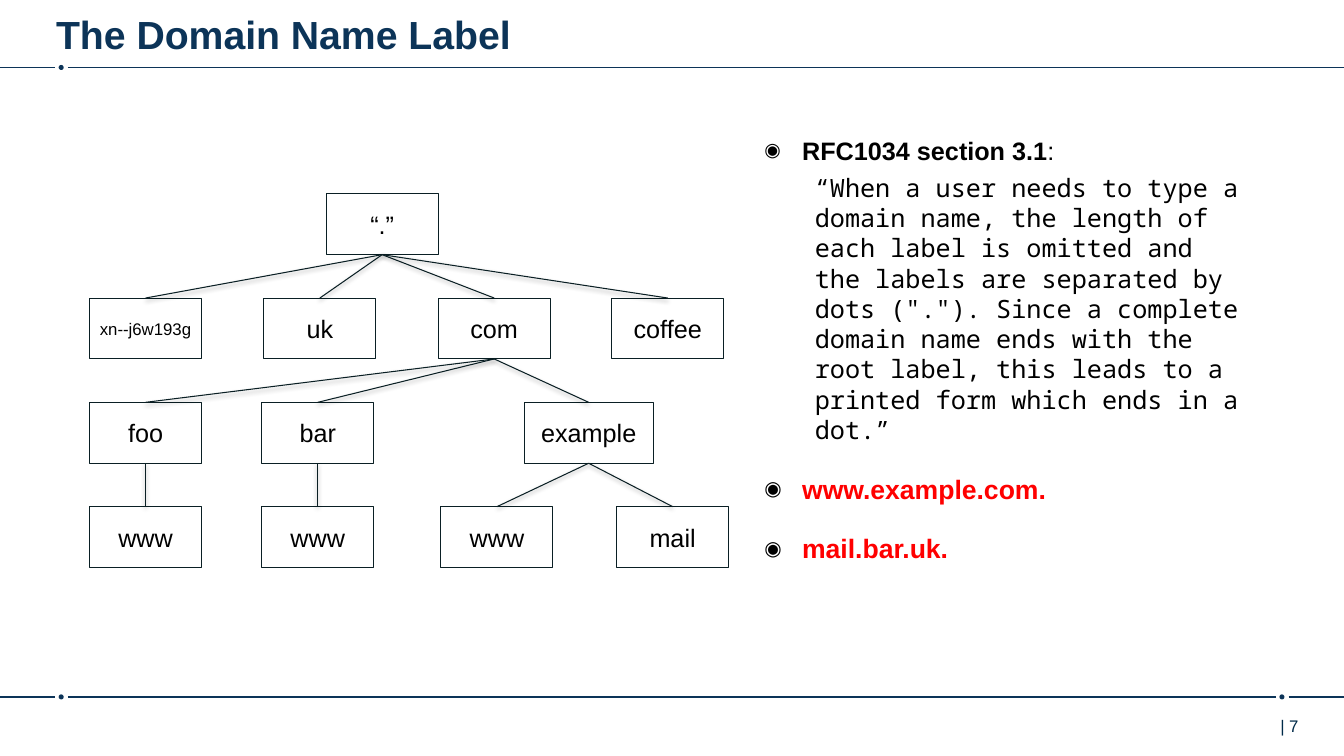
import pptx
import pptx.util
import pptx.dml.color
import pptx.enum.shapes
import pptx.enum.text
import pptx.oxml
import pptx.oxml.ns

Pt = pptx.util.Pt
NAVY, INK, RED, BLACK = "0C3458", "0A1F24", "FF0000", "000000"
NS = pptx.oxml.ns.nsdecls("a")
SHADOW = (f'<a:effectLst {NS}><a:outerShdw blurRad="40000" dist="20000" dir="5400000" rotWithShape="0">'
          '<a:srgbClr val="000000"><a:alpha val="38000"/></a:srgbClr></a:outerShdw></a:effectLst>')
NO_EFFECT = f"<a:effectLst {NS}/>"

# Tree nodes: key -> (label, centre x, row, width, text size)
NODES = {
    "root": ("“.”", 273, 0, 80, 18),
    "idn": ("xn--j6w193g", 104, 1, 80, 12),
    "uk": ("uk", 228.5, 1, 80, 18),
    "com": ("com", 353, 1, 80, 18),
    "coffee": ("coffee", 477, 1, 80, 18),
    "foo": ("foo", 104, 2, 80, 18),
    "bar": ("bar", 227, 2, 80, 18),
    "example": ("example", 420.5, 2, 92, 18),
    "foo www": ("www", 104, 3, 80, 18),
    "bar www": ("www", 227, 3, 80, 18),
    "example www": ("www", 355, 3, 80, 18),
    "mail": ("mail", 480.5, 3, 80, 18),
}
CHILDREN = {
    "root": ["idn", "uk", "com", "coffee"],
    "com": ["foo", "bar", "example"],
    "foo": ["foo www"],
    "bar": ["bar www"],
    "example": ["example www", "mail"],
}
TREE_TOP, ROW_PITCH, NODE_HEIGHT = 138.4, 74.5, 43.5

QUOTE = ('“When a user needs to type a domain name, the length of each label is omitted '
         'and the labels are separated by dots ("."). Since a complete domain name ends '
         'with the root label, this leads to a printed form which ends in a dot.”')


def rgb(value):
    return pptx.dml.color.RGBColor.from_string(value)


def add_text(p, text, size=18, color=BLACK, bold=False, font="Arial"):
    r = p.add_run()
    r.text = text
    r.font.size, r.font.bold, r.font.name = Pt(size), bold, font
    r.font.color.rgb = rgb(color)


def set_margins(tf, left, top, right, bottom):
    tf.margin_left, tf.margin_top = Pt(left), Pt(top)
    tf.margin_right, tf.margin_bottom = Pt(right), Pt(bottom)


def add_box(slide, left, top, width, height, margins):
    tf = slide.shapes.add_textbox(Pt(left), Pt(top), Pt(width), Pt(height)).text_frame
    tf.word_wrap = True
    set_margins(tf, *margins)
    return tf


def add_line(slide, x1, y1, x2, y2, color, width, effect=NO_EFFECT):
    line = slide.shapes.add_connector(
        pptx.enum.shapes.MSO_CONNECTOR.STRAIGHT, Pt(x1), Pt(y1), Pt(x2), Pt(y2))
    line.line.color.rgb = rgb(color)
    line.line.width = Pt(width)
    line._element.spPr.append(pptx.oxml.parse_xml(effect))
    return line


def add_dot(slide, x, y):
    sp = slide.shapes.add_shape(
        pptx.enum.shapes.MSO_SHAPE.OVAL, Pt(x - 1.8), Pt(y - 1.8), Pt(3.6), Pt(3.6))
    sp.shadow.inherit = False
    sp.fill.solid()
    sp.fill.fore_color.rgb = rgb(NAVY)
    sp.line.fill.background()


def add_node(slide, label, center, row, width, size):
    sp = slide.shapes.add_shape(
        pptx.enum.shapes.MSO_SHAPE.RECTANGLE, Pt(center - width / 2),
        Pt(TREE_TOP + row * ROW_PITCH), Pt(width), Pt(NODE_HEIGHT))
    sp.shadow.inherit = False
    sp.fill.background()
    sp.line.color.rgb = rgb(INK)
    sp.line.width = Pt(0.75)
    tf = sp.text_frame
    set_margins(tf, 0, 3.6, 0, 3.6)
    tf.vertical_anchor = pptx.enum.text.MSO_ANCHOR.MIDDLE
    p = tf.paragraphs[0]
    p.alignment = pptx.enum.text.PP_ALIGN.CENTER
    add_text(p, label, size)
    return sp


def add_edge(slide, parent, child):
    (x1, y1), (x2, y2) = [
        (sp.left.pt + sp.width.pt / 2, sp.top.pt + drop)
        for sp, drop in ((parent, NODE_HEIGHT), (child, 0))]
    line = add_line(slide, x1, y1, x2, y2, INK, 0.75, SHADOW)
    line.begin_connect(parent, 2)
    line.end_connect(child, 0)


def indent(p, margin, first=0):
    pPr = p._p.get_or_add_pPr()
    pPr.set("marL", str(Pt(margin)))
    pPr.set("indent", str(Pt(first)))
    return pPr


def add_bullet(p):
    pPr = indent(p, 27, -27)
    for xml in (f'<a:buClr {NS}><a:srgbClr val="{BLACK}"/></a:buClr>',
                f'<a:buSzPct {NS} val="75000"/>',
                f'<a:buFont {NS} typeface="Arial"/>',
                f'<a:buChar {NS} char="◉"/>'):
        pPr.append(pptx.oxml.parse_xml(xml))


def add_frame(slide):
    # Rules and dots at the top and bottom of the page
    for y, right in ((48.2, 960), (497.8, 911.5)):
        add_line(slide, 0, y, 39.5, y, NAVY, 1)
        add_line(slide, 48.5, y, right, y, NAVY, 1)
        add_dot(slide, 43.7, y)
    add_dot(slide, 915.7, 497.8)
    add_line(slide, 920.5, 497.8, 960, 497.8, NAVY, 1)
    # Page number
    tf = add_box(slide, 904.5, 507.5, 55.5, 29, (10, 3.6, 0, 3.6))
    add_text(tf.paragraphs[0], "| 7", 12, "002B49")


def add_tree(slide):
    shapes = {key: add_node(slide, *node) for key, node in NODES.items()}
    for parent, children in CHILDREN.items():
        for child in children:
            add_edge(slide, shapes[parent], shapes[child])


def add_explanation(slide):
    tf = add_box(slide, 546, 96.5, 348.5, 379, (0, 0, 0, 0))
    p = tf.paragraphs[0]
    add_bullet(p)
    add_text(p, "RFC1034 section 3.1", bold=True)
    add_text(p, ":")
    # Quotation
    p = tf.add_paragraph()
    p.level = 1
    indent(p, 36)
    p.space_before = Pt(5)
    add_text(p, QUOTE, font="Noto Sans Mono")
    # Examples
    for name in ("www.example.com.", "mail.bar.uk."):
        p = tf.add_paragraph()
        p.space_before = Pt(20)
        add_bullet(p)
        add_text(p, name, 19, RED, bold=True)


def main():
    prs = pptx.Presentation()
    prs.slide_width, prs.slide_height = Pt(960), Pt(540)
    slide = prs.slides.add_slide(prs.slide_layouts[6])
    add_frame(slide)
    # Title
    tf = add_box(slide, 33, 3.6, 851, 35.5, (7.2, 3.6, 7.2, 3.6))
    add_text(tf.paragraphs[0], "The Domain Name Label", 28, NAVY, bold=True)
    add_tree(slide)
    add_explanation(slide)
    prs.save("out.pptx")


if __name__ == "__main__":
    main()
